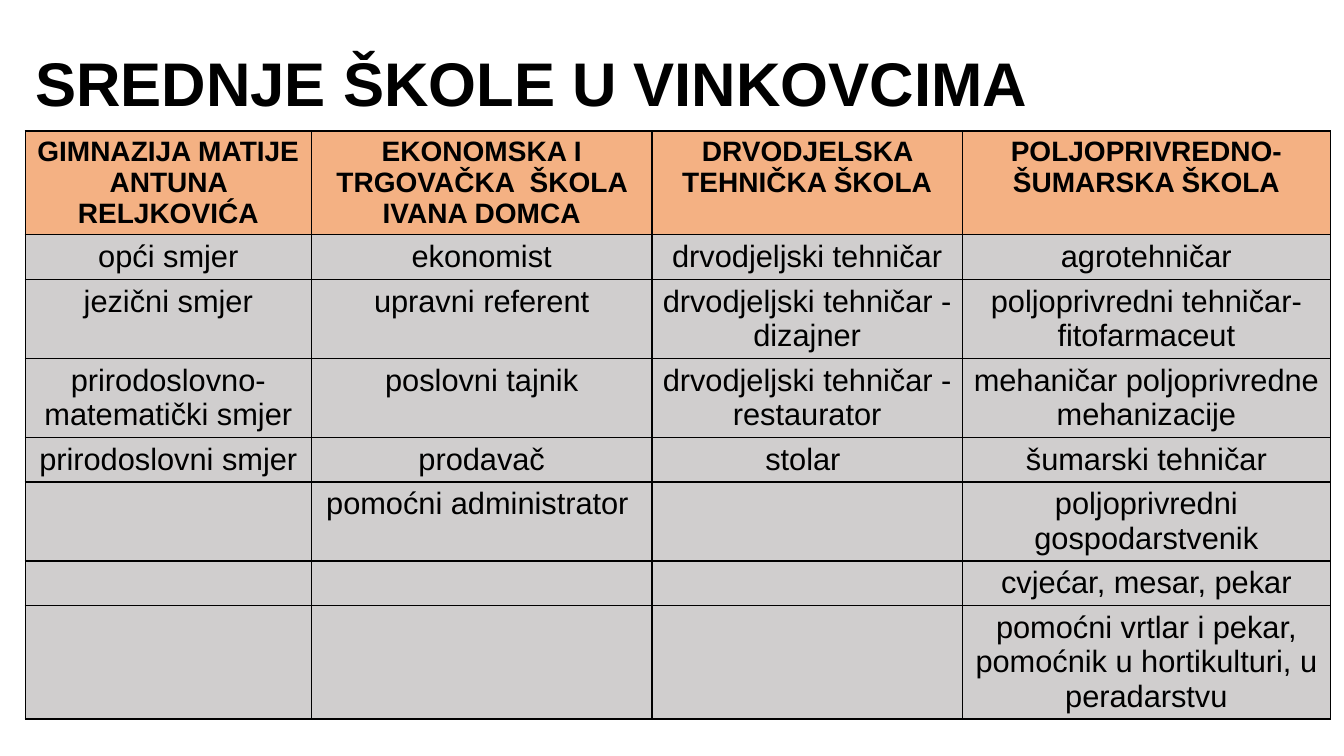
from lxml import etree
from pptx import Presentation
from pptx import util as u
from pptx.dml import color
from pptx.enum import text
from pptx.oxml import ns

TITLE = "SREDNJE ŠKOLE U VINKOVCIMA"
ROWS = [
    ["GIMNAZIJA MATIJE ANTUNA RELJKOVIĆA", "EKONOMSKA I TRGOVAČKA  ŠKOLA IVANA DOMCA",
     "DRVODJELSKA TEHNIČKA ŠKOLA", "POLJOPRIVREDNO-ŠUMARSKA ŠKOLA"],
    ["opći smjer", "ekonomist", "drvodjeljski tehničar", "agrotehničar"],
    ["jezični smjer", "upravni referent", "drvodjeljski tehničar - dizajner",
     "poljoprivredni tehničar-fitofarmaceut"],
    ["prirodoslovno-matematički smjer", "poslovni tajnik",
     "drvodjeljski tehničar - restaurator", "mehaničar poljoprivredne mehanizacije"],
    ["prirodoslovni smjer", "prodavač", "stolar ", "šumarski tehničar"],
    ["", "pomoćni administrator ", "", "poljoprivredni gospodarstvenik"],
    ["", "", "", "cvjećar, mesar, pekar"],
    ["", "", "", "pomoćni vrtlar i pekar, pomoćnik u hortikulturi, u peradarstvu"],
]
WIDTHS = [204.4, 243.4, 221.6, 263]
ONE, TWO, THREE = 31.8, 56.4, 81
HEIGHTS = [74, ONE, TWO, TWO, ONE, TWO, ONE, THREE]


def rgb(code):
    return color.RGBColor.from_string(code)


def apply(item, **values):
    """Set each named attribute of the item."""
    for name, value in values.items():
        setattr(item, name, value)


class Deck:
    font = "Arial"
    ink = "000000"
    head = "F4B183"
    body = "D0CECE"

    def __init__(self, width, height):
        self.prs = Presentation()
        apply(self.prs, slide_width=u.Pt(width), slide_height=u.Pt(height))
        self.slide = self.prs.slides.add_slide(self.prs.slide_layouts[5])

    def label(self, frame, words, size, bold, align):
        par = frame.paragraphs[0]
        par.alignment = align
        if words:
            par.add_run().text = words
        for item in [par, *par.runs]:
            apply(item.font, name=self.font, size=u.Pt(size), bold=bold)
            item.font.color.rgb = rgb(self.ink)

    def title(self, words, left, top, width, height):
        shape = self.slide.shapes.title
        apply(shape, left=u.Pt(left), top=u.Pt(top), width=u.Pt(width), height=u.Pt(height))
        frame = shape.text_frame
        apply(frame, word_wrap=True, auto_size=text.MSO_AUTO_SIZE.NONE,
              vertical_anchor=text.MSO_ANCHOR.MIDDLE)
        self.label(frame, words, 44, True, text.PP_ALIGN.LEFT)
        frame.paragraphs[0].line_spacing = 0.9

    def border(self, cell, width):
        props = cell._tc.get_or_add_tcPr()
        for side in "LRTB":
            line = etree.SubElement(props, ns.qn("a:ln" + side), w=str(u.Pt(width)))
            fill = etree.SubElement(line, ns.qn("a:solidFill"))
            etree.SubElement(fill, ns.qn("a:srgbClr"), val=self.ink)

    def table(self, rows, widths, heights, left, top):
        grid = self.slide.shapes.add_table(
            len(rows), len(widths), u.Pt(left), u.Pt(top),
            u.Pt(sum(widths)), u.Pt(sum(heights))).table
        apply(grid, first_row=False, horz_banding=False)
        for col, width in zip(grid.columns, widths):
            col.width = u.Pt(width)
        for r, (row, height) in enumerate(zip(rows, heights)):
            grid.rows[r].height = u.Pt(height)
            for c, words in enumerate(row):
                cell = grid.cell(r, c)
                self.border(cell, 1)
                cell.fill.solid()
                cell.fill.fore_color.rgb = rgb(self.body if r else self.head)
                self.label(cell.text_frame, words, 22 if r else 20, r == 0,
                           text.PP_ALIGN.CENTER)


def main():
    deck = Deck(960, 540)
    deck.title(TITLE, 18, 9.4, 828, 104.4)
    deck.table(ROWS, WIDTHS, HEIGHTS, 18, 93.6)
    deck.prs.save("out.pptx")


if __name__ == "__main__":
    main()
